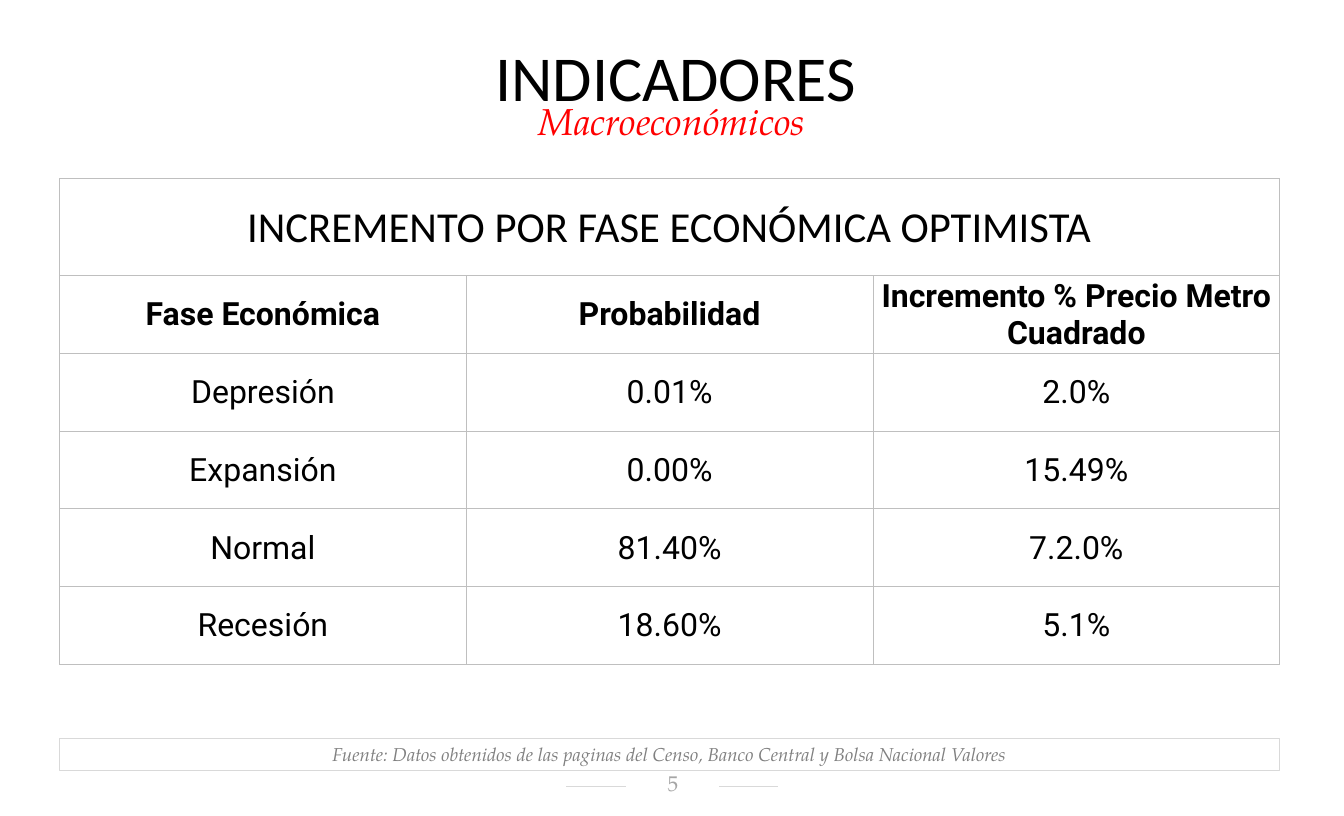
import pptx
import pptx.dml.color
import pptx.enum.shapes
import pptx.enum.text
import pptx.oxml
import pptx.oxml.ns
import pptx.util
from pptx.util import Inches

COLORS = {
    "text": "000000",
    "accent": "FF0000",
    "source": "808080",
    "number": "A6A6A6",
    "rule": "D9D9D9",
    "grid": "BFBFBF",
}
SERIF = "TeX Gyre Pagella"
SANS = "Calibri"
TABLE_FONT = "Roboto"
ANCHOR = pptx.enum.text.MSO_ANCHOR

TABLE_TITLE = "INCREMENTO POR FASE ECONÓMICA OPTIMISTA"
HEADINGS = ["Fase Económica", "Probabilidad", "Incremento % Precio Metro Cuadrado"]
PHASES = [
    ["Depresión", "0.01%", "2.0%"],
    ["Expansión", "0.00%", "15.49%"],
    ["Normal", "81.40%", "7.2.0%"],
    ["Recesión", "18.60%", "5.1%"],
]


def rgb(color):
    return pptx.dml.color.RGBColor.from_string(COLORS[color])


class SlideBuilder:
    def __init__(self, slide):
        self.slide = slide

    def set_text(self, frame, text, size, font, color="text", bold=False, italic=False):
        """Put one centred paragraph into a text frame and return it."""
        frame.text = text
        frame.word_wrap = True
        paragraph = frame.paragraphs[0]
        paragraph.alignment = pptx.enum.text.PP_ALIGN.CENTER
        for run in paragraph.runs:
            run.font.size = pptx.util.Pt(size)
            run.font.name = font
            run.font.bold = bold
            run.font.italic = italic
            run.font.color.rgb = rgb(color)
        return paragraph

    def set_margins(self, frame, left, top, right, bottom):
        frame.margin_left, frame.margin_top = Inches(left), Inches(top)
        frame.margin_right, frame.margin_bottom = Inches(right), Inches(bottom)

    def title(self, text, left, top, width, height):
        title = self.slide.shapes.title
        title.left, title.top = Inches(left), Inches(top)
        title.width, title.height = Inches(width), Inches(height)
        frame = title.text_frame
        frame.auto_size = pptx.enum.text.MSO_AUTO_SIZE.NONE
        frame.vertical_anchor = ANCHOR.TOP
        self.set_margins(frame, 0.13, 0.07, 0.13, 0.07)
        self.set_text(frame, text, 48, SANS).line_spacing = 0.7

    def text_box(self, text, left, top, width, height, **style):
        box = self.slide.shapes.add_textbox(
            Inches(left), Inches(top), Inches(width), Inches(height))
        self.set_text(box.text_frame, text, font=SERIF, **style)
        return box.text_frame

    def framed_text(self, text, left, top, width, height, **style):
        box = self.slide.shapes.add_shape(
            pptx.enum.shapes.MSO_SHAPE.RECTANGLE,
            Inches(left), Inches(top), Inches(width), Inches(height))
        box.shadow.inherit = False
        box.fill.background()
        box.line.color.rgb = rgb("rule")
        box.line.width = pptx.util.Pt(0.75)
        box.text_frame.vertical_anchor = ANCHOR.TOP
        self.set_text(box.text_frame, text, font=SERIF, **style)

    def rule(self, start, end, y):
        line = self.slide.shapes.add_connector(
            pptx.enum.shapes.MSO_CONNECTOR.STRAIGHT,
            Inches(start), Inches(y), Inches(end), Inches(y))
        line.line.color.rgb = rgb("rule")
        line.line.width = pptx.util.Pt(0.5)
        properties = line._element.spPr
        properties.append(properties.makeelement(pptx.oxml.ns.qn("a:effectLst"), {}))

    def cell(self, cell, text, size=24, font=TABLE_FONT, bold=False):
        cell.fill.background()
        cell.vertical_anchor = ANCHOR.MIDDLE
        self.set_margins(cell, 0.01, 0.01, 0.01, 0)
        self.set_text(cell.text_frame, text, size, font, bold=bold)
        self.border(cell)

    def border(self, cell):
        properties = cell._tc.get_or_add_tcPr()
        for index, side in enumerate(["lnL", "lnR", "lnT", "lnB"]):
            properties.insert(index, pptx.oxml.parse_xml(
                f'<a:{side} {pptx.oxml.ns.nsdecls("a")} w="{pptx.util.Pt(0.5)}">'
                f'<a:solidFill><a:srgbClr val="{COLORS["grid"]}"/></a:solidFill>'
                f'</a:{side}>'))

    def table(self, title, headings, records, left, top, width, title_height, row_height):
        rows = [[title] + [""] * (len(headings) - 1), headings] + records
        height = title_height + row_height * (len(rows) - 1)
        table = self.slide.shapes.add_table(
            len(rows), len(headings),
            Inches(left), Inches(top), Inches(width), Inches(height)).table
        table.first_row = table.horz_banding = False
        for column in table.columns:
            column.width = Inches(width / len(headings))
        for number, values in enumerate(rows):
            table.rows[number].height = Inches(row_height if number else title_height)
            for column, value in enumerate(values):
                style = {"size": 32, "font": SANS} if number == 0 else {"bold": number == 1}
                self.cell(table.cell(number, column), value, **style)
        table.cell(0, 0).merge(table.cell(0, len(headings) - 1))


def main():
    deck = pptx.Presentation()
    deck.slide_width, deck.slide_height = Inches(14), Inches(8.5)
    builder = SlideBuilder(deck.slides.add_slide(deck.slide_layouts[5]))

    for start, end in [(5.9, 6.52), (7.49, 8.1)]:
        builder.rule(start, end, 8.19)
    page_number = builder.text_box("5", 6.51, 8.04, 0.98, 0.26, size=16, color="number")
    page_number.vertical_anchor = ANCHOR.MIDDLE
    builder.set_margins(page_number, 0.12, 0.02, 0.1, 0.05)

    builder.title("INDICADORES", 0.06, 0.54, 13.96, 0.7)
    builder.text_box("Macroeconómicos ", 0.05, 0.97, 14, 0.57,
                     size=28, color="accent", italic=True)
    builder.framed_text(
        "Fuente: Datos obtenidos de las paginas del Censo, Banco Central y Bolsa Nacional Valores",
        0.62, 7.69, 12.71, 0.34, size=14, color="source", italic=True)
    builder.table(TABLE_TITLE, HEADINGS, PHASES, left=0.62, top=1.86, width=12.71,
                  title_height=1.01, row_height=0.81)
    deck.save("out.pptx")


if __name__ == "__main__":
    main()
